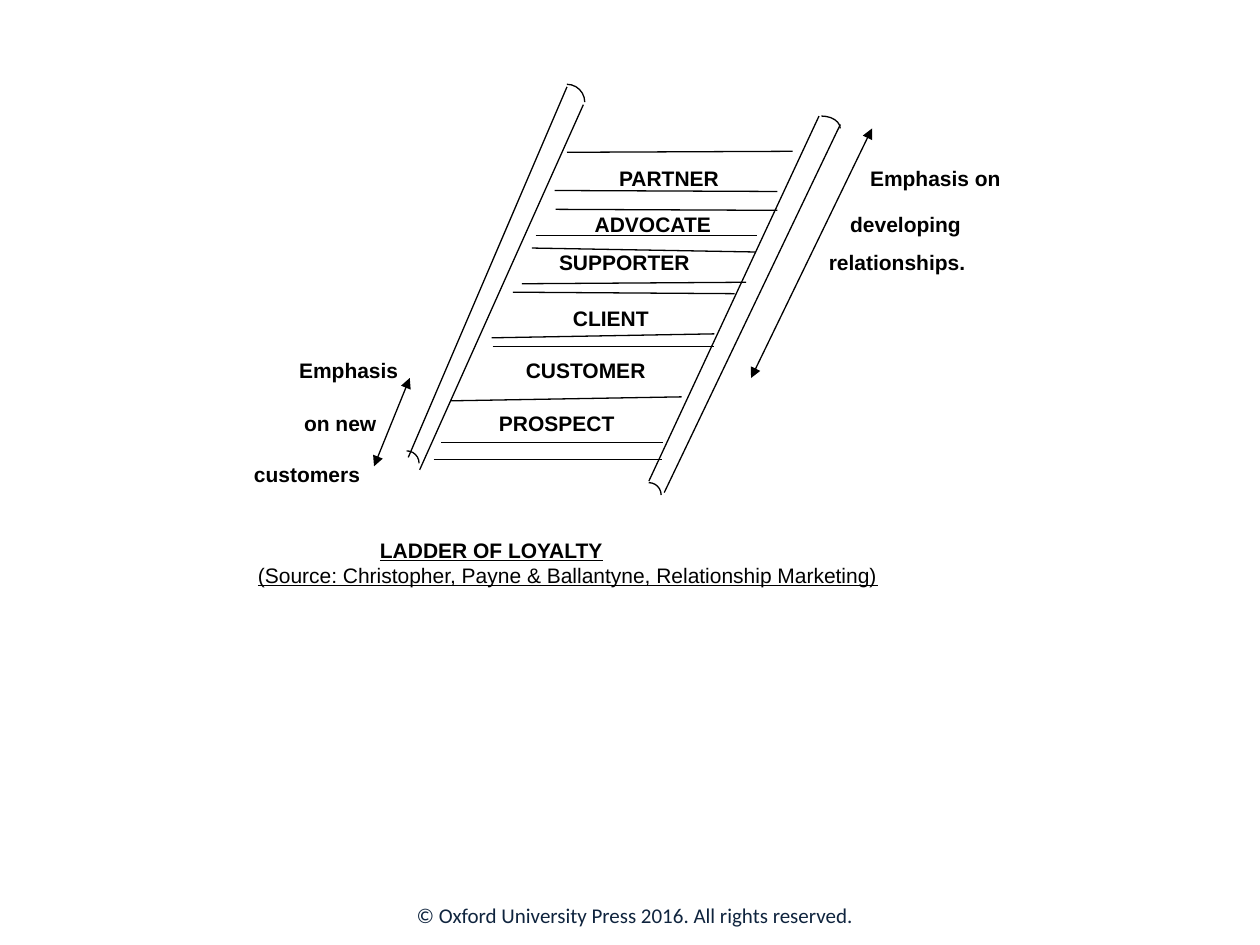
from dataclasses import dataclass

from lxml.etree import SubElement
from pptx import Presentation
from pptx.dml.color import RGBColor
from pptx.enum.shapes import MSO_CONNECTOR as Connector, MSO_SHAPE as Shape
from pptx.enum.text import MSO_ANCHOR as Anchor, PP_ALIGN as Align
from pptx.oxml.ns import qn
from pptx.slide import Slide
from pptx.util import Cm, Pt


@dataclass(frozen=True)
class Theme:
    ink: RGBColor = RGBColor(0x00, 0x00, 0x00)
    footer_ink: RGBColor = RGBColor(0x0F, 0x24, 0x3E)
    font: str = "Arial"
    footer_font: str = "Calibri"
    text_size: Pt = Pt(12)
    line_width: Pt = Pt(0.75)


@dataclass(frozen=True)
class Line:
    """A straight line between two points, in centimetres."""
    x1: float
    y1: float
    x2: float
    y2: float
    arrows: bool = False


@dataclass(frozen=True)
class RailEnd:
    """A quarter arc that rounds the end of a rail, in centimetres."""
    left: float
    top: float
    width: float
    height: float


@dataclass(frozen=True)
class Label:
    """One line of text, placed by its left edge and vertical middle."""
    text: str
    left: float
    middle: float
    width: float = 3.4
    bold: bool = True
    underline: bool = False
    align: Align = Align.LEFT
    font: str = Theme.font
    color: RGBColor = Theme.ink


THEME = Theme()
LABEL_HEIGHT = 0.6

RAILS = [
    Line(11.43, 1.75, 8.23, 9.22),
    Line(11.76, 2.11, 8.46, 9.47),
    Line(16.51, 2.34, 13.08, 9.7),
    Line(16.94, 2.51, 13.39, 9.93),
]
RAIL_ENDS = [
    RailEnd(11.43, 1.7, 0.36, 0.36),
    RailEnd(16.56, 2.34, 0.38, 0.25),
    RailEnd(8.2, 9.09, 0.25, 0.25),
    RailEnd(13.08, 9.73, 0.25, 0.25),
]
RUNGS = [
    Line(11.43, 3.07, 15.98, 3.05),
    Line(11.18, 3.84, 15.67, 3.86),
    Line(11.2, 4.22, 15.67, 4.24),
    Line(10.8, 4.75, 15.27, 4.75),
    Line(10.72, 5, 15.24, 5.08),
    Line(10.52, 5.72, 15.04, 5.69),
    Line(10.34, 5.89, 14.81, 5.92),
    Line(9.91, 6.81, 14.4, 6.73),
    Line(9.93, 6.99, 14.4, 6.99),
    Line(9.09, 8.08, 13.74, 8),
    Line(8.89, 8.92, 13.36, 8.92),
    Line(8.74, 9.27, 13.34, 9.27),
]
EMPHASIS_ARROWS = [
    Line(17.58, 2.59, 15.14, 7.62, arrows=True),
    Line(8.26, 7.62, 7.54, 9.4, arrows=True),
]
STAGES = [
    Label("PARTNER", 12.48, 3.59),
    Label("ADVOCATE", 11.99, 4.52),
    Label("SUPPORTER", 11.27, 5.28),
    Label("CLIENT", 11.55, 6.41),
    Label("CUSTOMER", 10.6, 7.46),
    Label("PROSPECT", 10.06, 8.53),
]
EMPHASIS_NOTES = [
    Label("Emphasis on", 17.54, 3.59),
    Label("developing", 17.14, 4.52),
    Label("relationships.", 16.71, 5.28),
    Label("Emphasis", 6.03, 7.46),
    Label("on new", 6.13, 8.53),
    Label("customers", 5.12, 9.56),
]
CAPTIONS = [
    Label("LADDER OF LOYALTY", 7.66, 11.09, 5, underline=True),
    Label("(Source: Christopher, Payne & Ballantyne, Relationship Marketing)",
          5.2, 11.59, 13, bold=False, underline=True),
]
FOOTER = Label("© Oxford University Press 2016. All rights reserved.",
               7.49, 18.45, 10.62, bold=False, align=Align.CENTER,
               font=THEME.footer_font, color=THEME.footer_ink)


def draw_line(slide: Slide, line: Line) -> None:
    connector = slide.shapes.add_connector(
        Connector.STRAIGHT, Cm(line.x1), Cm(line.y1), Cm(line.x2), Cm(line.y2))
    connector.line.color.rgb = THEME.ink
    connector.line.width = THEME.line_width
    if line.arrows:
        outline = connector.line._get_or_add_ln()
        for end in ("a:headEnd", "a:tailEnd"):
            SubElement(outline, qn(end), type="triangle")
    SubElement(connector._element.spPr, qn("a:effectLst"))


def draw_rail_end(slide: Slide, end: RailEnd) -> None:
    # The arc shows only the top right quarter of its box
    shape = slide.shapes.add_shape(
        Shape.ARC, Cm(end.left - end.width), Cm(end.top),
        Cm(2 * end.width), Cm(2 * end.height))
    shape.shadow.inherit = False
    shape.fill.background()
    shape.line.color.rgb = THEME.ink
    shape.line.width = THEME.line_width


def draw_label(slide: Slide, label: Label) -> None:
    box = slide.shapes.add_textbox(
        Cm(label.left), Cm(label.middle - LABEL_HEIGHT / 2),
        Cm(label.width), Cm(LABEL_HEIGHT))
    frame = box.text_frame
    frame.margin_left = frame.margin_right = Cm(0)
    frame.margin_top = frame.margin_bottom = Cm(0)
    frame.vertical_anchor = Anchor.MIDDLE
    frame.word_wrap = True
    frame.text = label.text
    paragraph = frame.paragraphs[0]
    paragraph.alignment = label.align
    font = paragraph.runs[0].font
    font.name = label.font
    font.size = THEME.text_size
    font.bold = label.bold
    font.underline = label.underline
    font.color.rgb = label.color


def main() -> None:
    presentation = Presentation()
    presentation.slide_width = Cm(25.4)
    presentation.slide_height = Cm(19.05)
    slide = presentation.slides.add_slide(presentation.slide_layouts[6])

    # Ladder and emphasis arrows
    for line in RAILS + RUNGS + EMPHASIS_ARROWS:
        draw_line(slide, line)
    for end in RAIL_ENDS:
        draw_rail_end(slide, end)

    # Stages, notes, caption and footer
    for label in STAGES + EMPHASIS_NOTES + CAPTIONS + [FOOTER]:
        draw_label(slide, label)

    presentation.save("out.pptx")


if __name__ == "__main__":
    main()
